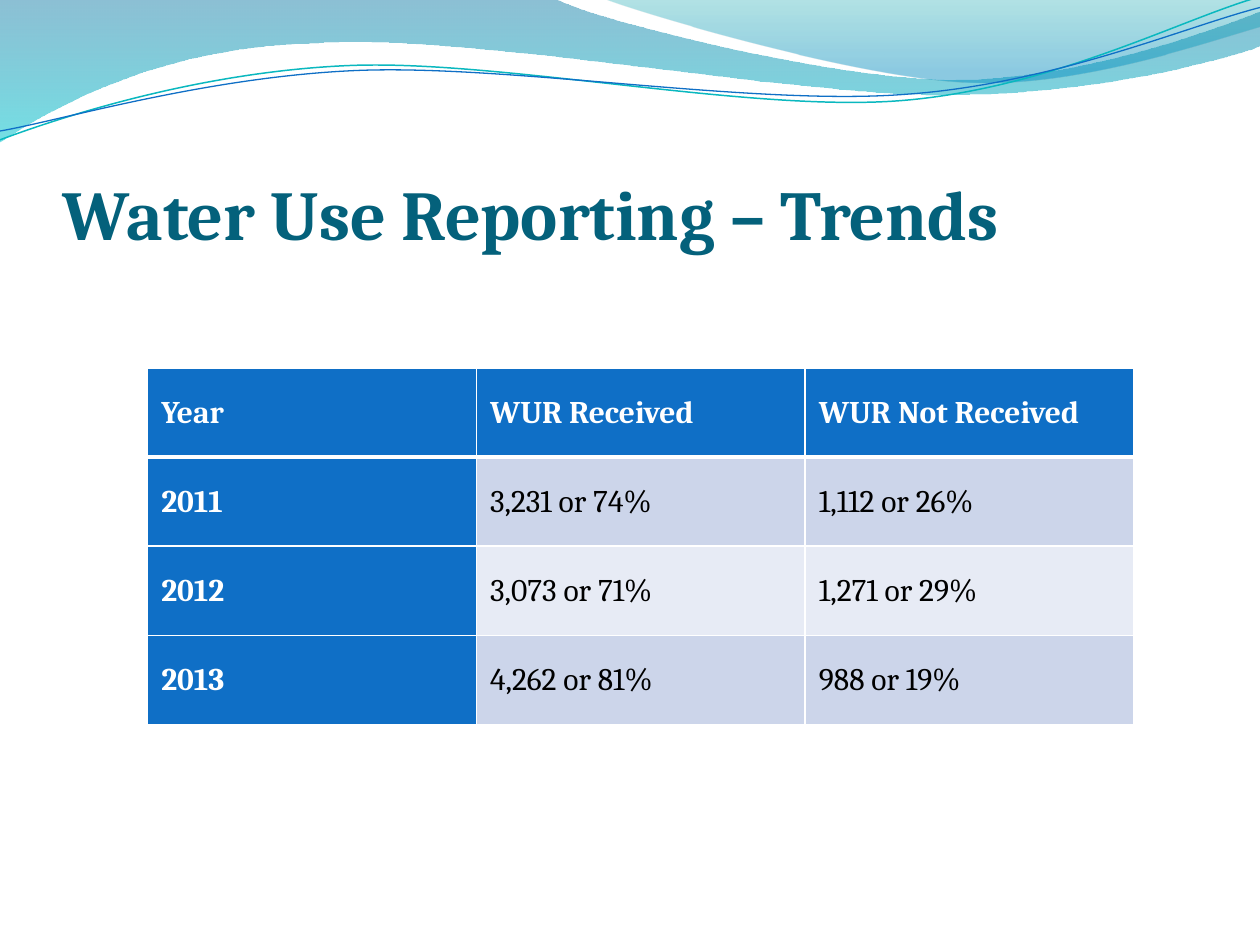
from math import cos, radians, sin

from pptx import Presentation
from pptx.dml.color import RGBColor as Rgb
from pptx.enum.text import MSO_ANCHOR as Anchor
from pptx.oxml import parse_xml
from pptx.oxml.ns import nsdecls
from pptx.util import Inches, Pt

WHITE = Rgb(0xFF, 0xFF, 0xFF)
BLACK = Rgb(0, 0, 0)
BLUE = Rgb(0x0F, 0x6F, 0xC6)
TEAL = Rgb(0x0A, 0xB8, 0xBF)
NAVY = Rgb(0x04, 0x61, 0x7B)
BANDS = Rgb(0xCC, 0xD5, 0xEA), Rgb(0xE7, 0xEB, 0xF5)
DEEP = Rgb(0, 0x74, 0xA1)
AQUA = Rgb(0, 0xC6, 0xCF)
SEA = Rgb(0, 0xA1, 0xA9)
SKY = Rgb(0, 0x8B, 0xBF)
FONT = "Cambria"
TILT = 2.7

BACK = [(0, 0), (4.4, -0.01), (4.76, 0.17, 6.64, 0.63, 7.58, 0.63),
        (8.53, 0.63, 9.58, 0.26, 10, 0.09), (10.01, 0.36),
        (9.83, 0.44, 8.7, 0.76, 7.46, 0.75), (6.22, 0.75, 3.82, 0.28, 2.57, 0.34),
        (1.29, 0.36, 0.46, 0.83, -0.01, 1.13), (0, 0)]
FRONT = [(4.79, -0.01), (5.09, 0.11, 6.82, 0.62, 7.69, 0.65),
         (8.56, 0.69, 9.61, 0.32, 10, 0.21), (10, 0), (4.79, -0.01)]
UPPER = [(0, 1.11), (0.48, 0.93, 1.58, 0.57, 2.77, 0.52),
         (3.95, 0.47, 5.93, 0.89, 7.13, 0.8), (8.33, 0.71, 9.38, 0.15, 9.98, -0.02)]
LOWER = [(0, 1.04), (0.47, 0.96, 1.64, 0.61, 2.83, 0.56),
         (4.03, 0.51, 5.97, 0.84, 7.17, 0.75), (8.36, 0.67, 9.41, 0.21, 10, 0.06)]
ROWS = [("Year", "WUR Received", "WUR Not Received"),
        ("2011", "3,231 or 74%", "1,112 or 26%"),
        ("2012", "3,073 or 71%", "1,271 or 29%"),
        ("2013", "4,262 or 81%", "988 or 19%")]


def level(path, mid):
    """Turn a path clockwise by the tilt around its middle."""
    across, down = cos(radians(TILT)), sin(radians(TILT))
    turned = []
    for step in path:
        flat = []
        for x, y in zip(step[::2], step[1::2]):
            dx, dy = x - mid[0], y - mid[1]
            flat += [mid[0] + dx * across - dy * down, mid[1] + dx * down + dy * across]
        turned.append(tuple(flat))
    return turned


def bend(form, path):
    """Make a cubic curve of each step that has three points."""
    lines = iter(form._element.findall(".//{*}lnTo"))
    for step in path[1:]:
        first = next(lines)
        if len(step) == 6:
            curve = parse_xml(f'<a:cubicBezTo {nsdecls("a")}/>')
            first.addprevious(curve)
            for line in (first, next(lines), next(lines)):
                curve.append(line[0])
                line.getparent().remove(line)


def write(frame, text, size=18, color=BLACK, bold=False, after=0):
    """Set the text of a frame and its format."""
    para = frame.paragraphs[0]
    para.space_after = Pt(after)
    run = para.add_run()
    run.text = text
    font = run.font
    font.name, font.size, font.bold = FONT, Pt(size), bold
    font.color.rgb = color


class Deck:
    """Hold the current slide and draw each kind of element on it."""

    def __init__(self):
        """Open a deck with one blank slide."""
        self.file = Presentation()
        self.file.slide_width, self.file.slide_height = Inches(10), Inches(7.5)
        self.slide = self.file.slides.add_slide(self.file.slide_layouts[6])

    def shape(self, path, close):
        """Draw a plain outline along a path."""
        pts = [(Inches(x), Inches(y)) for step in path for x, y in zip(step[::2], step[1::2])]
        pen = self.slide.shapes.build_freeform(*pts[0])
        pen.add_line_segments(pts[1:], close=close)
        form = pen.convert_to_shape()
        form.shadow.inherit = False
        bend(form, path)
        return form

    def wave(self, path, stops):
        """Draw a closed wave with a see-through fade from top to bottom."""
        form = self.shape(path, True)
        form.line.fill.background()
        form.fill.gradient()
        form.fill.gradient_angle = 270
        for stop, (place, color, alpha) in zip(form.fill.gradient_stops, stops):
            stop.position = place
            stop.color.rgb = color
            tint = stop._gs.find(".//{*}srgbClr")
            tint.append(parse_xml(f'<a:alpha {nsdecls("a")} val="{alpha * 1000}"/>'))

    def curve(self, path, mid, color, width):
        """Draw an open curved line, tilted around its middle."""
        form = self.shape(level(path, mid), False)
        form.rotation = 360 - TILT
        form.fill.background()
        form.line.color.rgb = color
        form.line.width = Pt(width)

    def title(self, text):
        """Add the slide title."""
        box = self.slide.shapes.add_textbox(Inches(0.5), Inches(0.77), Inches(9), Inches(1.25))
        frame = box.text_frame
        frame.word_wrap = True
        frame.vertical_anchor = Anchor.BOTTOM
        frame.margin_left = frame.margin_right = frame.margin_bottom = 0
        frame.margin_top = Inches(0.05)
        write(frame, text, size=40, color=NAVY, bold=True)

    def edge(self, cell, **widths):
        """Give a cell white borders of the given widths."""
        props = cell._tc.get_or_add_tcPr()
        for i, (side, width) in enumerate(widths.items()):
            props.insert(i, parse_xml(
                f'<a:ln{side} {nsdecls("a")} w="{Pt(width)}"><a:solidFill>'
                f'<a:srgbClr val="{WHITE}"/></a:solidFill></a:ln{side}>'))

    def table(self, rows):
        """Add a table with a bold first row and column."""
        grid = self.slide.shapes.add_table(
            len(rows), len(rows[0]), Inches(1.17), Inches(2.92), Inches(7.83), Inches(2.83)).table
        for r, row in enumerate(rows):
            for c, text in enumerate(row):
                cell = grid.cell(r, c)
                head = r == 0 or c == 0
                cell.fill.solid()
                cell.fill.fore_color.rgb = BLUE if head else BANDS[(r - 1) % 2]
                cell.vertical_anchor = Anchor.MIDDLE
                cell.margin_left = cell.margin_right = Inches(0.11)
                cell.margin_top, cell.margin_bottom = Inches(0.01), 0
                write(cell.text_frame, text, color=WHITE if head else BLACK, bold=head, after=6)
                self.edge(cell, L=1, R=1, T=3 if r == 1 else 1, B=3 if r == 0 else 1)


def main():
    """Build the slide and save it."""
    deck = Deck()
    deck.wave(BACK, [(0, DEEP, 45), (1, AQUA, 55)])
    deck.wave(FRONT, [(0, SEA, 30), (0.8, SKY, 45)])
    deck.curve(UPPER, (4.99, 0.58), TEAL, 0.85)
    deck.curve(LOWER, (5, 0.59), BLUE, 0.75)
    deck.title("Water Use Reporting – Trends")
    deck.table(ROWS)
    deck.file.save("out.pptx")


if __name__ == "__main__":
    main()
